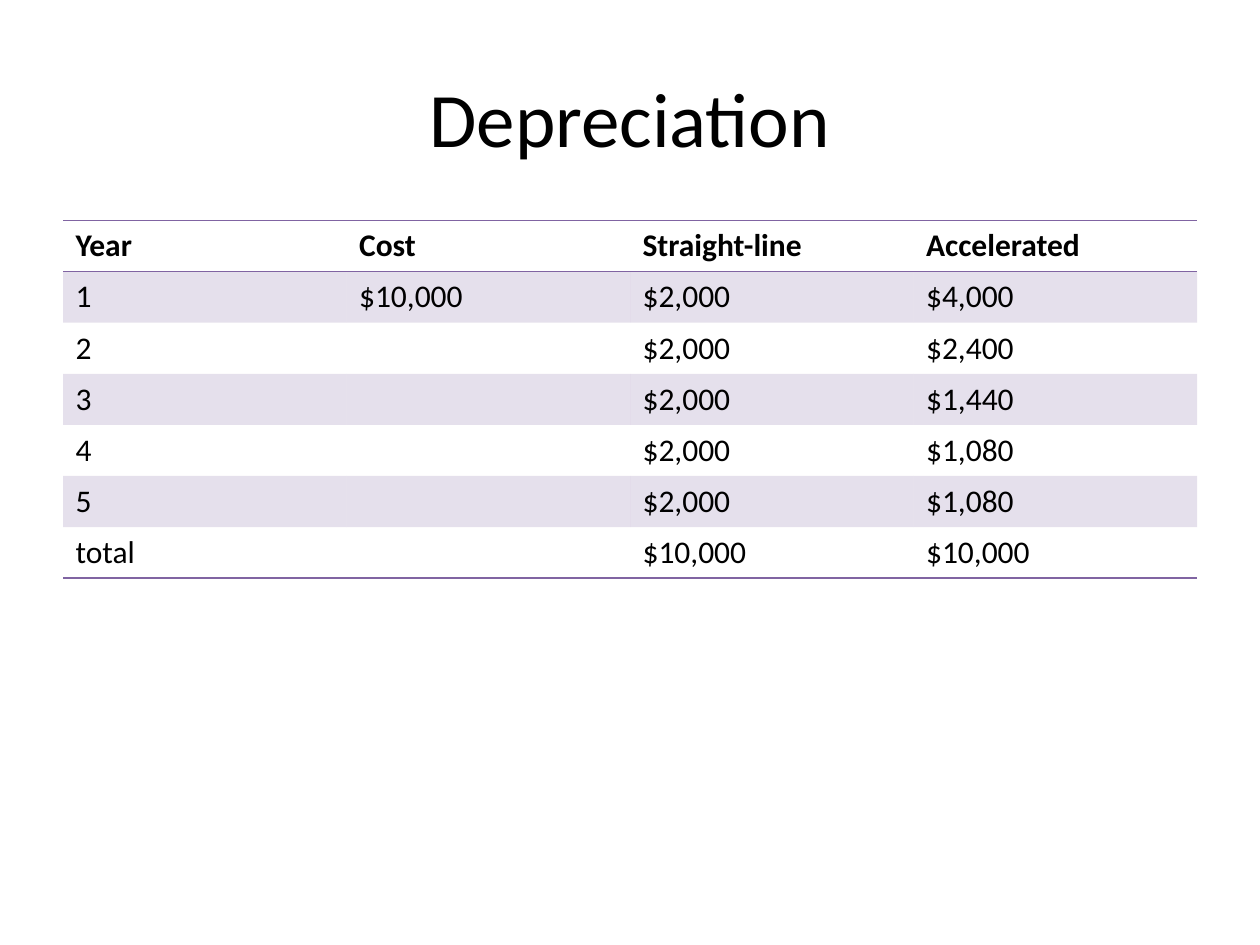
"""Build the depreciation slide with its comparison table."""
from typing import NamedTuple

from lxml import etree
from pptx import Presentation
from pptx import util as u
from pptx.dml.color import RGBColor
from pptx.enum import text
from pptx.oxml.ns import qn

PX = u.Inches(1) // 200
FONT = "Calibri"
BLACK, PURPLE = "000000", "8064A2"
BAND_OPACITY = 20
PLAIN_STYLE = "{2D5ABB26-0587-4C30-8999-92F81FD0307C}"


class Box(NamedTuple):
    """Hold a position and a size in px."""
    left: int
    top: int
    width: int
    height: int

    def emu(self) -> list[int]:
        """Return the four lengths in EMU."""
        return [length * PX for length in self]


class Entry(NamedTuple):
    """Hold one row of the depreciation table."""
    year: str
    cost: str
    straight_line: str
    accelerated: str


ENTRIES = [
    Entry("Year", "Cost", "Straight-line", "Accelerated"),
    Entry("1", "$10,000", "$2,000", "$4,000"),
    Entry("2", "", "$2,000", "$2,400"),
    Entry("3", "", "$2,000", "$1,440"),
    Entry("4", "", "$2,000", "$1,080"),
    Entry("5", "", "$2,000", "$1,080"),
    Entry("total", "", "$10,000", "$10,000"),
]
ROW_HEIGHT = 81
TITLE_BOX = Box(100, 60, 1800, 250)
TABLE_BOX = Box(100, 350, 1800, ROW_HEIGHT * len(ENTRIES))


def color(value: str) -> RGBColor:
    """Turn a hex string into a colour."""
    return RGBColor.from_string(value)


def write(frame, content: str, *, size: int = 18, bold: bool = False,
          align=text.PP_ALIGN.LEFT, anchor=None) -> None:
    """Put formatted text into a text frame."""
    if anchor is not None:
        frame.vertical_anchor = anchor
    paragraph = frame.paragraphs[0]
    paragraph.alignment = align
    if content:
        run = paragraph.add_run()
        run.text = content
        run.font.name, run.font.size, run.font.bold = FONT, u.Pt(size), bold
        run.font.color.rgb = color(BLACK)


def add_border(cell, side: str) -> None:
    """Draw a one-point purple line on a side of a cell."""
    properties = cell._tc.get_or_add_tcPr()
    line = etree.SubElement(properties, qn(f"a:ln{side}"), w=str(u.Pt(1)))
    fill = etree.SubElement(line, qn("a:solidFill"))
    etree.SubElement(fill, qn("a:srgbClr"), val=PURPLE)


def fill_cell(cell, banded: bool) -> None:
    """Give a cell a translucent purple band or no fill."""
    if not banded:
        cell.fill.background()
        return
    cell.fill.solid()
    cell.fill.fore_color.rgb = color(PURPLE)
    shade = cell._tc.tcPr.find(f"{qn('a:solidFill')}/{qn('a:srgbClr')}")
    etree.SubElement(shade, qn("a:alpha"), val=str(BAND_OPACITY * 1000))


def add_schedule(slide, entries: list[Entry], box: Box) -> None:
    """Add the depreciation table with ruled header and total rows."""
    schedule = slide.shapes.add_table(
        len(entries), len(Entry._fields), *box.emu()).table
    schedule._tbl.tblPr.find(qn("a:tableStyleId")).text = PLAIN_STYLE
    borders = {0: "TB", len(entries) - 1: "B"}
    for row, entry in enumerate(entries):
        for column, content in enumerate(entry):
            cell = schedule.cell(row, column)
            write(cell.text_frame, content, bold=row == 0)
            for side in borders.get(row, ""):
                add_border(cell, side)
            fill_cell(cell, banded=row % 2 == 1)


def main() -> None:
    """Create and save the presentation."""
    deck = Presentation()
    deck.slide_width, deck.slide_height = 2000 * PX, 1500 * PX
    slide = deck.slides.add_slide(deck.slide_layouts[5])
    title = slide.shapes.title
    title.left, title.top, title.width, title.height = TITLE_BOX.emu()
    write(title.text_frame, "Depreciation", size=44,
          align=text.PP_ALIGN.CENTER, anchor=text.MSO_ANCHOR.MIDDLE)
    add_schedule(slide, ENTRIES, TABLE_BOX)
    deck.save("out.pptx")


if __name__ == "__main__":
    main()
